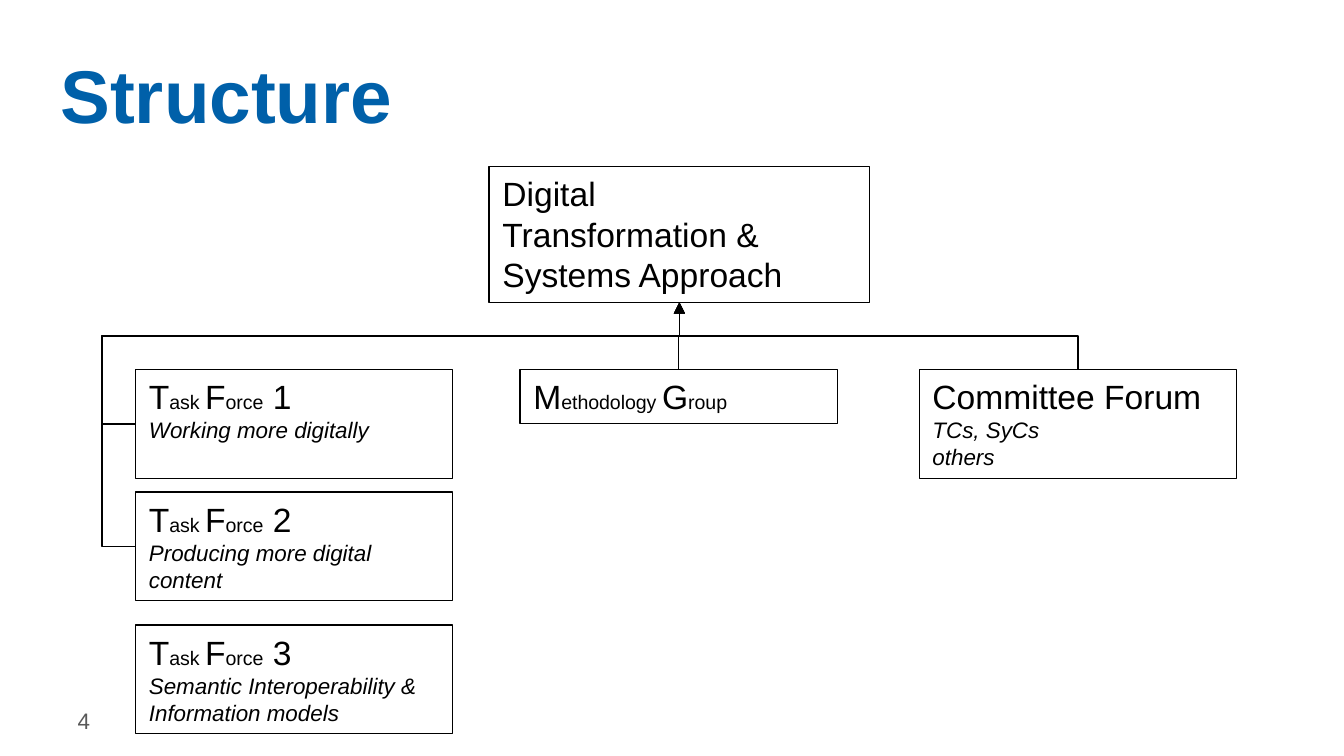
from dataclasses import dataclass

from lxml.etree import SubElement
from pptx import Presentation
from pptx.dml.color import RGBColor
from pptx.enum.shapes import MSO_CONNECTOR as Link, MSO_SHAPE as Preset
from pptx.enum.text import MSO_ANCHOR as Anchor, PP_ALIGN as Align
from pptx.oxml.ns import qn
from pptx.util import Inches, Pt

COLORS = {"title": "0060A9", "number": "595959", "ink": "000000"}
LARGE, SMALL, DETAIL = 18, 10.5, 12
TOP, LEFT, BOTTOM = 0, 1, 2
BUS_Y = 2.5
SIDE_GAP = 0.25
ROW_Y = 2.75
WIDTH, HEIGHT = 2.36, 0.81
TASK_X = 1.01

Spans = list[tuple[str, float]]


@dataclass
class Unit:
    x: float
    y: float
    width: float
    height: float
    heading: list[Spans]
    details: tuple[str, ...] = ()
    link_side: int | None = None

    @property
    def center(self) -> float:
        return self.x + self.width / 2

    @property
    def bottom(self) -> float:
        return self.y + self.height


def task_force(number: int, y: float, detail: str, link_side: int | None = None) -> Unit:
    heading = [("T", LARGE), ("ask ", SMALL), ("F", LARGE), ("orce", SMALL), (f" {number}", LARGE)]
    return Unit(TASK_X, y, WIDTH, HEIGHT, [heading], (detail,), link_side)


HUB = Unit(3.64, 1.24, 2.83, 1.01,
           [[("Digital", LARGE)], [("Transformation & Systems Approach", LARGE)]])
UNITS = [
    task_force(1, ROW_Y, "Working more digitally", LEFT),
    task_force(2, 3.66, "Producing more digital content", LEFT),
    task_force(3, 4.65, "Semantic Interoperability & Information models"),
    Unit(3.87, ROW_Y, WIDTH, 0.4,
         [[("M", LARGE), ("ethodology ", SMALL), ("G", LARGE), ("roup", SMALL)]],
         link_side=TOP),
    Unit(6.84, ROW_Y, WIDTH, HEIGHT, [[("Committee Forum", LARGE)]],
         ("TCs, SyCs", "others"), TOP),
]


def write_span(para, text: str, size: float, color: str, bold=False, italic=False) -> None:
    span = para.add_run()
    span.text = text
    values = {"name": "Arial", "size": Pt(size), "bold": bold, "italic": italic}
    for name, value in values.items():
        setattr(span.font, name, value)
    span.font.color.rgb = RGBColor.from_string(COLORS[color])


def style_line(line) -> None:
    line.color.rgb = RGBColor.from_string(COLORS["ink"])
    line.width = Pt(0.75)


def draw_unit(page, unit: Unit):
    box = page.shapes.add_shape(
        Preset.RECTANGLE, *map(Inches, (unit.x, unit.y, unit.width, unit.height)))
    box.shadow.inherit = False
    box.fill.background()
    style_line(box.line)
    frame = box.text_frame
    frame.word_wrap = True
    frame.vertical_anchor = Anchor.TOP
    lines = [(spans, False) for spans in unit.heading]
    lines += [([(detail, DETAIL)], True) for detail in unit.details]
    for index, (spans, italic) in enumerate(lines):
        para = frame.add_paragraph() if index else frame.paragraphs[0]
        para.alignment = Align.LEFT
        for text, size in spans:
            write_span(para, text, size, "ink", italic=italic)
    return box


def draw_link(page, unit: Unit, unit_box, hub_box) -> None:
    """Route an elbow from a unit by way of the shared bus line up to the hub."""
    link = page.shapes.add_connector(Link.ELBOW, 0, 0, 0, 0)
    link.begin_connect(unit_box, unit.link_side)
    link.end_connect(hub_box, BOTTOM)
    if unit.link_side == LEFT:
        start_y = unit.y + unit.height / 2
        width, height = HUB.center - unit.x, start_y - HUB.bottom
        left, top = unit.x, HUB.bottom
        preset, turn, flips = "bentConnector4", 180, {"flipH": "1"}
        bends = [-SIDE_GAP / width, (start_y - BUS_Y) / height]
    else:
        width, height = unit.y - HUB.bottom, abs(unit.center - HUB.center)
        left = (unit.center + HUB.center - width) / 2
        top = (unit.y + HUB.bottom - height) / 2
        preset, turn = "bentConnector3", 270
        flips = {"flipV": "1"} if unit.center > HUB.center else {}
        bends = [(unit.y - BUS_Y) / width]

    frame = {"left": left, "top": top, "width": width, "height": height}
    for name, value in frame.items():
        setattr(link, name, Inches(value))
    properties = link._element.spPr
    transform = properties.find(qn("a:xfrm"))
    for name in ("flipH", "flipV"):
        transform.attrib.pop(name, None)
    for name, value in {"rot": str(turn * 60000), **flips}.items():
        transform.set(name, value)
    geometry = properties.find(qn("a:prstGeom"))
    geometry.set("prst", preset)
    guides = geometry.find(qn("a:avLst"))
    for index, bend in enumerate(bends, 1):
        SubElement(guides, qn("a:gd"), name=f"adj{index}", fmla=f"val {round(bend * 100000)}")
    style_line(link.line)
    SubElement(properties.find(qn("a:ln")), qn("a:tailEnd"), type="triangle")
    SubElement(properties, qn("a:effectLst"))


def draw_title(page) -> None:
    title = page.shapes.title
    frame = {"left": 0.35, "top": 0.15, "width": 9.34, "height": 1.09}
    for name, value in frame.items():
        setattr(title, name, Inches(value))
    title.text_frame.vertical_anchor = Anchor.MIDDLE
    para = title.text_frame.paragraphs[0]
    para.alignment = Align.LEFT
    write_span(para, "Structure", 40, "title", bold=True)


def draw_page_number(page) -> None:
    box = page.shapes.add_textbox(*map(Inches, (0.48, 5.21, 0.87, 0.3)))
    box.text_frame.word_wrap = True
    box.text_frame.vertical_anchor = Anchor.MIDDLE
    write_span(box.text_frame.paragraphs[0], "4", 12, "number")


def main() -> None:
    deck = Presentation()
    deck.slide_width = Inches(10)
    deck.slide_height = deck.slide_width * 9 // 16
    page = deck.slides.add_slide(deck.slide_layouts.get_by_name("Title Only"))
    draw_title(page)
    draw_page_number(page)
    hub_box = draw_unit(page, HUB)
    for unit in UNITS:
        unit_box = draw_unit(page, unit)
        if unit.link_side is not None:
            draw_link(page, unit, unit_box, hub_box)
    deck.save("out.pptx")


if __name__ == "__main__":
    main()
